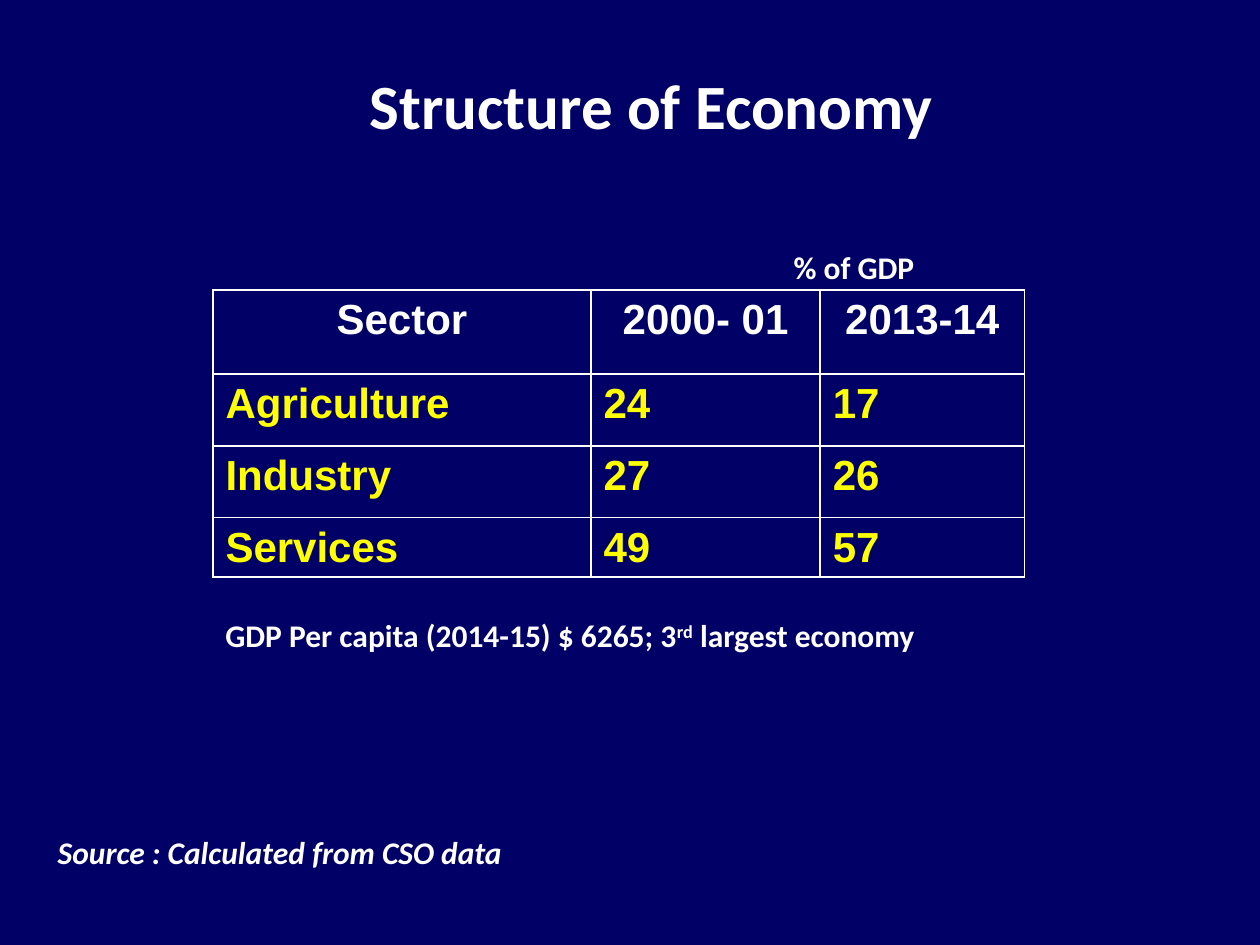
from lxml.etree import SubElement
from pptx import Presentation
from pptx.dml.color import RGBColor
from pptx.enum.text import MSO_ANCHOR as Anchor, MSO_AUTO_SIZE as AutoSize, PP_ALIGN as Align
from pptx.oxml.ns import qn
from pptx.util import Inches, Pt

COLORS = {"background": "000066", "text": "FFFFFF", "value": "FFFF00", "border": "FFFFFF"}
SECTORS = [
    ("Sector", "2000- 01", "2013-14"),
    ("Agriculture", "24", "17"),
    ("Industry", "27", "26"),
    ("Services", "49", "57"),
]
COLUMN_WIDTHS = (3, 1.82, 1.62)
ROW_HEIGHTS = (0.67, 0.57, 0.57, 0.47)


def write_text(frame, *parts, size=18, font="Calibri", color="text",
               italic=False, align=Align.LEFT, anchor=Anchor.TOP):
    """Write bold runs; a (text, baseline) pair makes a raised run."""
    frame.word_wrap = True
    frame.vertical_anchor = anchor
    para = frame.paragraphs[0]
    para.alignment = align
    for part in parts:
        text, baseline = part if isinstance(part, tuple) else (part, None)
        span = para.add_run()
        span.text = text
        span.font.size = Pt(size)
        span.font.name = font
        span.font.bold = True
        span.font.italic = italic
        span.font.color.rgb = RGBColor.from_string(COLORS[color])
        if baseline:
            span.font._element.set("baseline", str(baseline * 1000))


def add_title(page, text):
    """Place and fill the title placeholder."""
    title = page.shapes.title
    title.left, title.top = Inches(0.92), Inches(0.58)
    title.width, title.height = Inches(8.5), Inches(0.5)
    title.text_frame.auto_size = AutoSize.NONE
    write_text(title.text_frame, text, size=36, align=Align.CENTER, anchor=Anchor.MIDDLE)


def add_text(page, left, top, width, height, *parts, **style):
    """Add a text box with formatted runs."""
    box = page.shapes.add_textbox(Inches(left), Inches(top), Inches(width), Inches(height))
    write_text(box.text_frame, *parts, **style)


def add_borders(cell):
    """Draw a one-point line on each side of a cell."""
    properties = cell._tc.get_or_add_tcPr()
    for position, side in enumerate(("lnL", "lnR", "lnT", "lnB")):
        line = SubElement(properties, qn(f"a:{side}"), w=str(Pt(1)))
        fill = SubElement(line, qn("a:solidFill"))
        SubElement(fill, qn("a:srgbClr"), val=COLORS["border"])
        properties.insert(position, line)


def add_sector_table(page):
    """Add the table of sector shares of GDP."""
    table = page.shapes.add_table(
        len(SECTORS), len(COLUMN_WIDTHS), Inches(1.69), Inches(2.3),
        Inches(sum(COLUMN_WIDTHS)), Inches(sum(ROW_HEIGHTS))).table
    table.horz_banding = False
    for column, width in zip(table.columns, COLUMN_WIDTHS):
        column.width = Inches(width)
    for row_index, (row, height, texts) in enumerate(zip(table.rows, ROW_HEIGHTS, SECTORS)):
        row.height = Inches(height)
        is_header = row_index == 0
        for cell, text in zip(row.cells, texts):
            cell.fill.background()
            add_borders(cell)
            write_text(cell.text_frame, text, size=24, font="Arial",
                       color="text" if is_header else "value",
                       align=Align.CENTER if is_header else Align.LEFT)


def main():
    """Build and save the slide."""
    deck = Presentation()
    deck.slide_width, deck.slide_height = Inches(10), Inches(7.5)
    page = deck.slides.add_slide(deck.slide_layouts[5])
    page.background.fill.solid()
    page.background.fill.fore_color.rgb = RGBColor.from_string(COLORS["background"])
    add_title(page, "Structure of Economy")
    add_sector_table(page)
    add_text(page, 6.2, 1.92, 1.67, 0.4, "% of GDP")
    add_text(page, 0.36, 6.51, 8.5, 0.5, "Source : Calculated from CSO data",
             italic=True, anchor=Anchor.MIDDLE)
    add_text(page, 1.69, 4.84, 6.54, 0.4,
             "GDP Per capita (2014-15) $ 6265; 3", ("rd", 30), " largest economy")
    deck.save("out.pptx")


if __name__ == "__main__":
    main()
